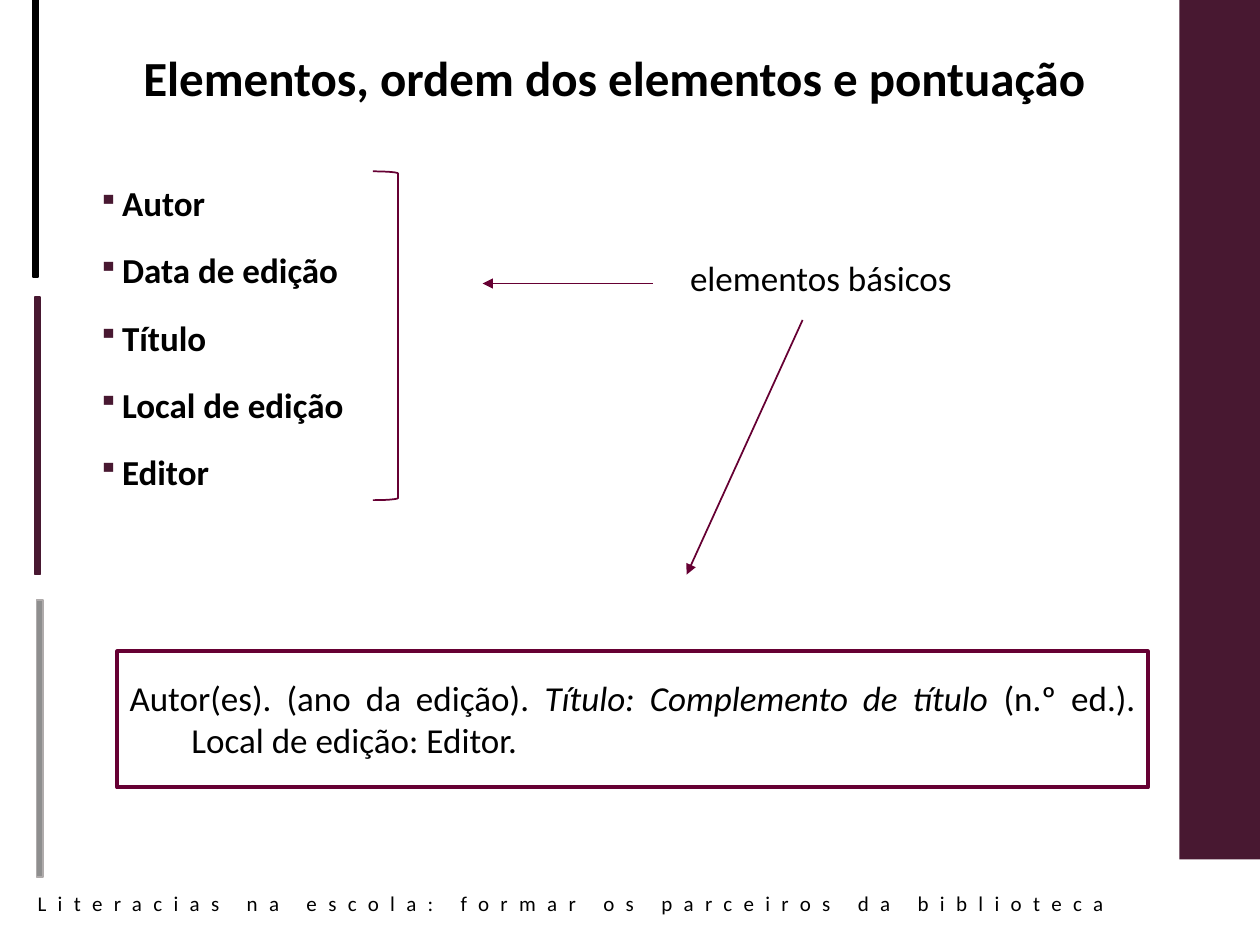
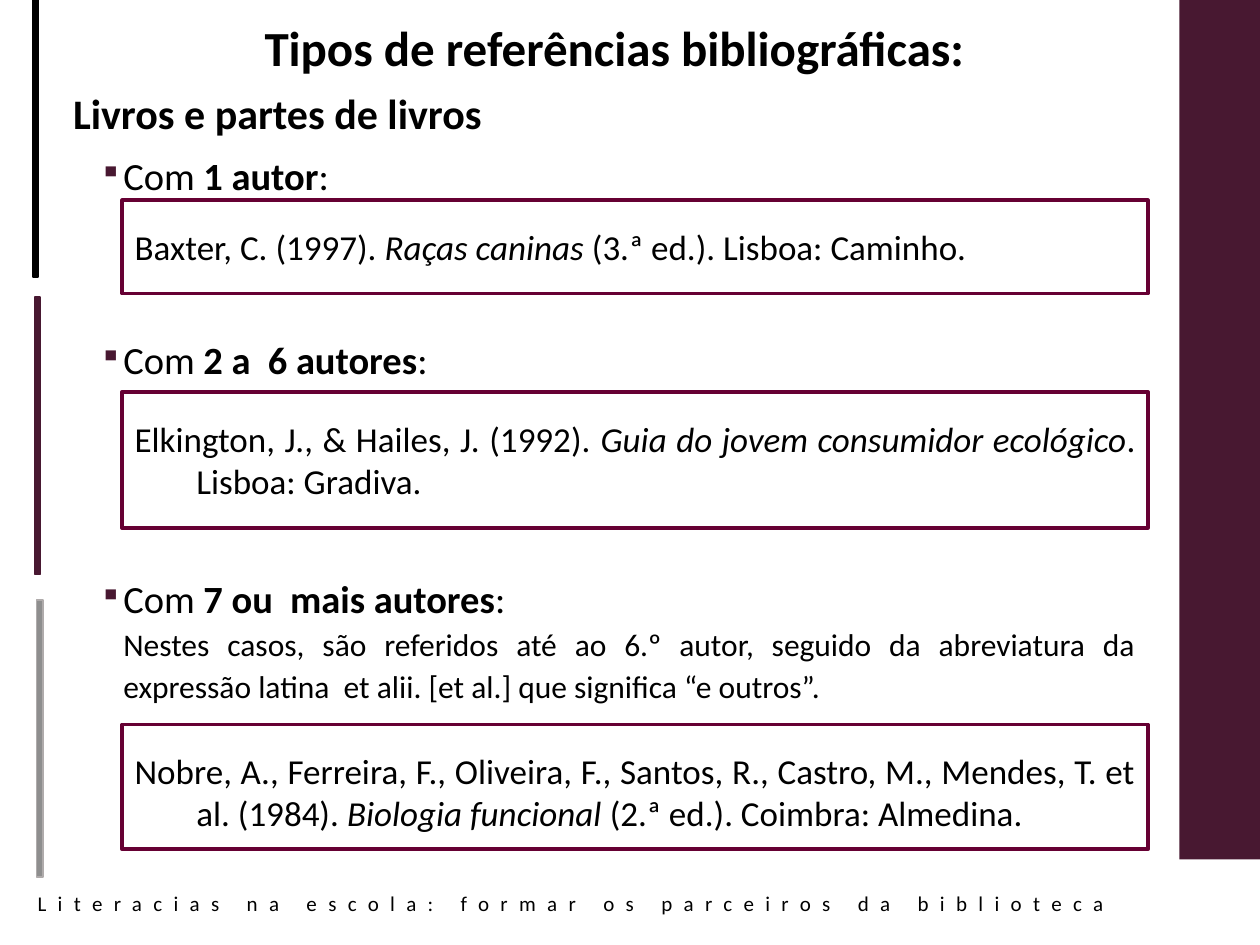
"""Build two slides on bibliographic references: basic elements and types of book reference."""
from lxml import etree
from pptx import Presentation
from pptx.dml.color import RGBColor
from pptx.enum.shapes import MSO_CONNECTOR, MSO_SHAPE
from pptx.enum.text import MSO_ANCHOR, MSO_AUTO_SIZE, PP_ALIGN
from pptx.oxml.ns import qn
from pptx.util import Inches, Pt

RECTANGLE, BRACKET = MSO_SHAPE.RECTANGLE, MSO_SHAPE.RIGHT_BRACKET
STRAIGHT = MSO_CONNECTOR.STRAIGHT
TOP, NO_FIT = MSO_ANCHOR.TOP, MSO_AUTO_SIZE.NONE
LEFT, CENTER, JUSTIFY = PP_ALIGN.LEFT, PP_ALIGN.CENTER, PP_ALIGN.JUSTIFY

FONT = "Calibri"
COLORS = {"text": "000000", "plum": "481831", "frame": "660033",
          "gray": "8E8E8E", "gray edge": "AFABAB"}

FOOTER = "Literacias na escola: formar os parceiros da biblioteca"
BAND = (9.36, 0, 0.64, 6.82)
SIDE_BARS = [
    ((0.26, 0, 0.04, 2.2), "text", "text"),
    ((0.28, 2.36, 0.04, 2.2), "plum", "plum"),
    ((0.29, 4.76, 0.05, 2.2), "gray", "gray edge"),
]

ELEMENTS_TITLE = "Elementos, ordem dos elementos e pontuação"
ELEMENTS = ["Autor", "Data de edição", "Título", "Local de edição", "Editor"]
ELEMENTS_LABEL = "elementos básicos"
ELEMENTS_ARROWS = [((5.18, 2.25), (3.83, 2.25)), ((6.37, 2.54), (5.45, 4.56))]
ELEMENTS_PATTERN = ((0.93, 5.17, 8.18, 1.08), (
    "Autor(es). (ano da edição). ", "Título: Complemento de título ",
    "(n.º ed.). Local de edição: Editor."))

TYPES_TITLE = "Tipos de referências bibliográficas:"
TYPES_SUBTITLE = "Livros e partes de livros"
AUTHOR_COUNTS = [("1 autor", 0), ("2 a  6 autores", 76), ("7 ou  mais autores", 108)]
AUTHOR_NOTE = ("Nestes casos, são referidos até ao 6.º autor, seguido da abreviatura da "
               "expressão latina  et alii. [et al.] que significa “e outros”.")
EXAMPLES = [
    ((0.97, 1.59, 8.14, 0.74), (
        "Baxter, C. (1997). ", "Raças caninas ", "(3.ª ed.). Lisboa: Caminho.")),
    ((0.97, 3.11, 8.14, 1.08), (
        "Elkington, J., & Hailes, J. (1992). ", "Guia do jovem consumidor ecológico",
        ". Lisboa: Gradiva.")),
    ((0.97, 5.75, 8.14, 0.99), (
        "Nobre, A., Ferreira, F., Oliveira, F., Santos, R., Castro, M., Mendes, T. et al. (1984). ",
        "Biologia funcional ", "(2.ª ed.). Coimbra: Almedina.")),
]


def rgb(name):
    return RGBColor.from_string(COLORS[name])


def box(values):
    return [Inches(value) for value in values]


def add_run(paragraph, text, size, bold=False, italic=False):
    run = paragraph.add_run()
    run.text = text
    font = run.font
    font.name, font.size, font.bold, font.italic = FONT, Pt(size), bold, italic
    font.color.rgb = rgb("text")
    return run


def format_paragraph(paragraph, align=LEFT, spacing=1.0, before=0, margin=0, indent=0):
    paragraph.alignment = align
    paragraph.line_spacing = spacing
    paragraph.space_before, paragraph.space_after = Pt(before), Pt(0)
    properties = paragraph._p.get_or_add_pPr()
    properties.set("marL", str(Inches(margin)))
    properties.set("indent", str(Inches(indent)))


def add_bullet(paragraph):
    properties = paragraph._p.get_or_add_pPr()
    color = etree.SubElement(properties, qn("a:buClr"))
    etree.SubElement(color, qn("a:srgbClr"), val=COLORS["plum"])
    etree.SubElement(properties, qn("a:buSzPct"), val="80000")
    etree.SubElement(properties, qn("a:buChar"), char="▪")


def next_paragraph(frame):
    first = frame.paragraphs[0]
    return frame.add_paragraph() if first.runs else first


def prepare_frame(frame):
    frame.word_wrap = True
    frame.auto_size = NO_FIT
    frame.vertical_anchor = TOP
    return frame


def add_text_frame(slide, area):
    return prepare_frame(slide.shapes.add_textbox(*box(area)).text_frame)


def add_bullet_item(frame, parts, size, before):
    paragraph = next_paragraph(frame)
    format_paragraph(paragraph, JUSTIFY, 1.1, before, 0.39, -0.19)
    add_bullet(paragraph)
    for text, bold in parts:
        add_run(paragraph, text, size, bold)


def add_outline(slide, kind, area, line, width, fill=None):
    shape = slide.shapes.add_shape(kind, *box(area))
    shape.shadow.inherit = False
    if fill:
        shape.fill.solid()
        shape.fill.fore_color.rgb = rgb(fill)
    else:
        shape.fill.background()
    if line:
        shape.line.color.rgb = rgb(line)
        shape.line.width = Pt(width)
    else:
        shape.line.fill.background()
    return shape


def add_reference(slide, area, parts):
    frame = prepare_frame(add_outline(slide, RECTANGLE, area, "frame", 2.25).text_frame)
    frame.margin_top = Inches(0.2)
    paragraph = frame.paragraphs[0]
    format_paragraph(paragraph, JUSTIFY, margin=0.49, indent=-0.49)
    for index, text in enumerate(parts):
        add_run(paragraph, text, 20, italic=index == 1)


def add_arrow(slide, start, end):
    arrow = slide.shapes.add_connector(STRAIGHT, *box(start + end))
    arrow.line.color.rgb = rgb("frame")
    arrow.line.width = Pt(1)
    etree.SubElement(arrow.line._get_or_add_ln(), qn("a:tailEnd"), type="triangle")
    etree.SubElement(arrow._element.spPr, qn("a:effectLst"))


def start_slide(presentation, title, height, spacing):
    slide = presentation.slides.add_slide(presentation.slide_layouts[5])
    placeholder = slide.shapes.title
    placeholder.left, placeholder.top, placeholder.width, placeholder.height = box(
        (0.48, 0.09, 8.79, height))
    paragraph = prepare_frame(placeholder.text_frame).paragraphs[0]
    format_paragraph(paragraph, CENTER, spacing)
    add_run(paragraph, title, 28, bold=True)

    add_outline(slide, RECTANGLE, BAND, None, 0, "plum")
    for area, fill, line in SIDE_BARS:
        add_outline(slide, RECTANGLE, area, line, 1, fill)
    footer = add_text_frame(slide, (0.2, 7.02, 9.19, 0.3)).paragraphs[0]
    format_paragraph(footer)
    add_run(footer, FOOTER, 12)._r.get_or_add_rPr().set("spc", "650")
    return slide


def build_elements(presentation):
    slide = start_slide(presentation, ELEMENTS_TITLE, 0.73, 1.5)
    frame = add_text_frame(slide, (0.48, 1.36, 8.62, 5.6))
    for index, element in enumerate(ELEMENTS):
        add_bullet_item(frame, [(element, True)], 20, 12 if index else 0)
    add_outline(slide, BRACKET, (2.96, 1.36, 0.2, 2.61), "frame", 1)
    label = add_text_frame(slide, (5.02, 1.99, 2.99, 0.44)).paragraphs[0]
    format_paragraph(label, CENTER)
    add_run(label, ELEMENTS_LABEL, 20)
    for start, end in ELEMENTS_ARROWS:
        add_arrow(slide, start, end)
    add_reference(slide, *ELEMENTS_PATTERN)


def build_types(presentation):
    slide = start_slide(presentation, TYPES_TITLE, 1.06, 1.0)
    subtitle = slide.shapes.title.text_frame.add_paragraph()
    format_paragraph(subtitle, before=6)
    add_run(subtitle, TYPES_SUBTITLE, 24, bold=True)

    frame = add_text_frame(slide, (0.49, 1.12, 8.62, 5.87))
    for count, before in AUTHOR_COUNTS:
        add_bullet_item(frame, [("Com ", False), (count, True), (":", False)], 22, before)
    note = frame.add_paragraph()
    format_paragraph(note, JUSTIFY, 1.1, margin=0.39)
    add_run(note, AUTHOR_NOTE, 18)
    for area, parts in EXAMPLES:
        add_reference(slide, area, parts)


def main():
    presentation = Presentation()
    presentation.slide_width, presentation.slide_height = Inches(10), Inches(7.5)
    build_elements(presentation)
    build_types(presentation)
    presentation.save("out.pptx")


if __name__ == "__main__":
    main()
